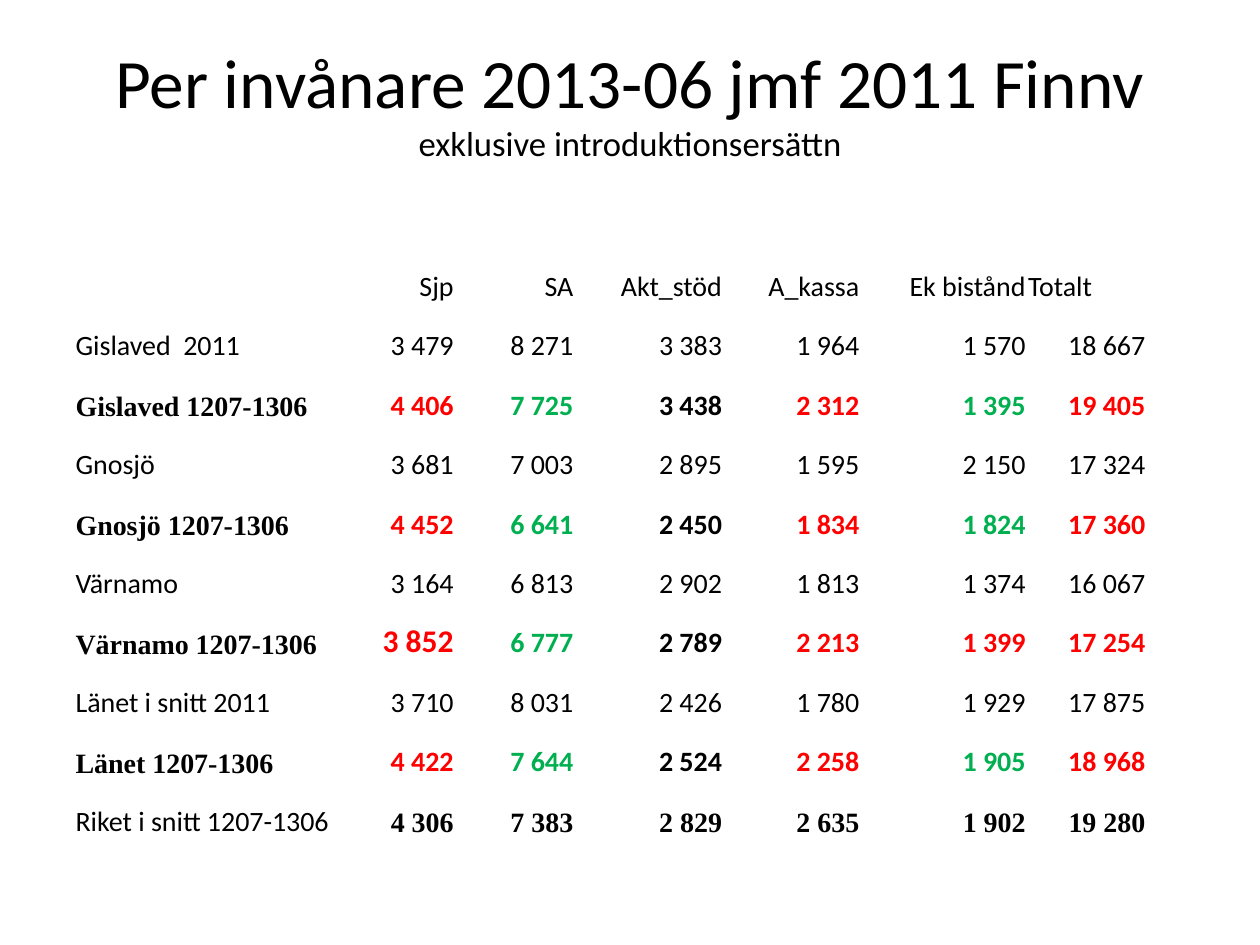
from lxml import etree
from pptx import Presentation
from pptx.dml.color import RGBColor
from pptx.enum.text import MSO_ANCHOR as Anchor, MSO_AUTO_SIZE as AutoSize, PP_ALIGN as Align
from pptx.oxml.ns import qn
from pptx.util import Inches, Pt

COLORS = {"black": "000000", "red": "FF0000", "green": "00B050", "white": "FFFFFF"}
SANS, SERIF = "Calibri", "Times New Roman"

HEADERS = ["", "Sjp", "SA", "Akt_stöd", "A_kassa", "Ek bistånd", "Totalt"]
COLUMN_WIDTHS = [2.27, 0.75, 0.95, 1.18, 1.09, 1.32, 0.95]
PLAIN = ["black"] * 6
CHANGE = ["red", "green", "black", "red", "green", "red"]
CHANGE_VARNAMO = ["red", "green", "black", "red", "red", "red"]

# Label, values, value colours, label font (None = regular), value font (None = regular)
ROWS = [
    ("Gislaved  2011", ["3 479", "8 271", "3 383", "1 964", "1 570", "18 667"], PLAIN, None, None),
    ("Gislaved 1207-1306", ["4 406", "7 725", "3 438", "2 312", "1 395", "19 405"], CHANGE, SERIF, SANS),
    ("Gnosjö", ["3 681", "7 003", "2 895", "1 595", "2 150", "17 324"], PLAIN, None, None),
    ("Gnosjö 1207-1306", ["4 452", "6 641", "2 450", "1 834", "1 824", "17 360"], CHANGE, SERIF, SANS),
    ("Värnamo", ["3 164", "6 813", "2 902", "1 813", "1 374", "16 067"], PLAIN, None, None),
    ("Värnamo 1207-1306", ["3 852", "6 777", "2 789", "2 213", "1 399", "17 254"], CHANGE_VARNAMO, SERIF, SANS),
    ("Länet i snitt 2011", ["3 710", "8 031", "2 426", "1 780", "1 929", "17 875"], PLAIN, None, None),
    ("Länet 1207-1306", ["4 422", "7 644", "2 524", "2 258", "1 905", "18 968"], CHANGE, SERIF, SANS),
    ("Riket i snitt 1207-1306", ["4 306", "7 383", "2 829", "2 635", "1 902", "19 280"], PLAIN, None, SERIF),
]
LARGER_VALUE = "3 852"


def style_font(font, size, color="black", name=SANS, bold=False):
    font.size, font.name, font.bold = Pt(size), name, bold
    font.color.rgb = RGBColor.from_string(COLORS[color])


def add_title(slide, left, top, width, height):
    title = slide.shapes.title
    title.left, title.top, title.width, title.height = map(Inches, (left, top, width, height))
    frame = title.text_frame
    frame.word_wrap, frame.auto_size = True, AutoSize.NONE
    frame.vertical_anchor = Anchor.MIDDLE
    paragraph = frame.paragraphs[0]
    paragraph.alignment = Align.CENTER
    heading = paragraph.add_run()
    heading.text = "Per invånare 2013-06 jmf 2011 Finnv"
    style_font(heading.font, 39.6)
    paragraph.add_line_break()
    subheading = paragraph.add_run()
    subheading.text = "exklusive introduktionsersättn"
    style_font(subheading.font, 19.8)


def set_borders(cell, color, width):
    properties = cell._tc.get_or_add_tcPr()
    for index, side in enumerate(("a:lnL", "a:lnR", "a:lnT", "a:lnB")):
        line = etree.Element(qn(side), w=str(Pt(width)))
        fill = etree.SubElement(line, qn("a:solidFill"))
        etree.SubElement(fill, qn("a:srgbClr"), val=COLORS[color])
        properties.insert(index, line)


def fill_cell(cell, text, align, color="black", bold_font=None):
    """Write one cell; bold_font makes the text bold in that font."""
    cell.margin_left = cell.margin_right = cell.margin_top = Inches(0.01)
    cell.margin_bottom = 0
    cell.vertical_anchor = Anchor.BOTTOM
    cell.fill.background()
    set_borders(cell, "white", 1)
    cell.text = text
    paragraph = cell.text_frame.paragraphs[0]
    paragraph.alignment = align
    size = 18 if text == LARGER_VALUE else 16
    style_font(paragraph.font, size, color, bold_font or SANS, bool(bold_font))


def add_cost_table(slide, left, top, width, height):
    row_count = len(ROWS) + 1
    table = slide.shapes.add_table(
        row_count, len(HEADERS), *map(Inches, (left, top, width, height))
    ).table
    table.first_row = table.horz_banding = False
    for column, column_width in zip(table.columns, COLUMN_WIDTHS):
        column.width = Inches(column_width)
    for row in table.rows:
        row.height = Inches(height / row_count)

    for column, header in enumerate(HEADERS):
        align = Align.LEFT if header in ("", "Totalt") else Align.RIGHT
        fill_cell(table.cell(0, column), header, align)
    for row, (label, values, colors, label_font, value_font) in enumerate(ROWS, 1):
        fill_cell(table.cell(row, 0), label, Align.LEFT, bold_font=label_font)
        for column, (value, color) in enumerate(zip(values, colors), 1):
            fill_cell(table.cell(row, column), value, Align.RIGHT, color, value_font)


def main():
    presentation = Presentation()
    presentation.slide_width, presentation.slide_height = Inches(10), Inches(7.5)
    slide = presentation.slides.add_slide(presentation.slide_layouts[5])
    add_title(slide, 0.5, 0.3, 9, 1.01)
    add_cost_table(slide, 0.59, 1.94, 8.5, 4.72)
    presentation.save("out.pptx")


if __name__ == "__main__":
    main()
